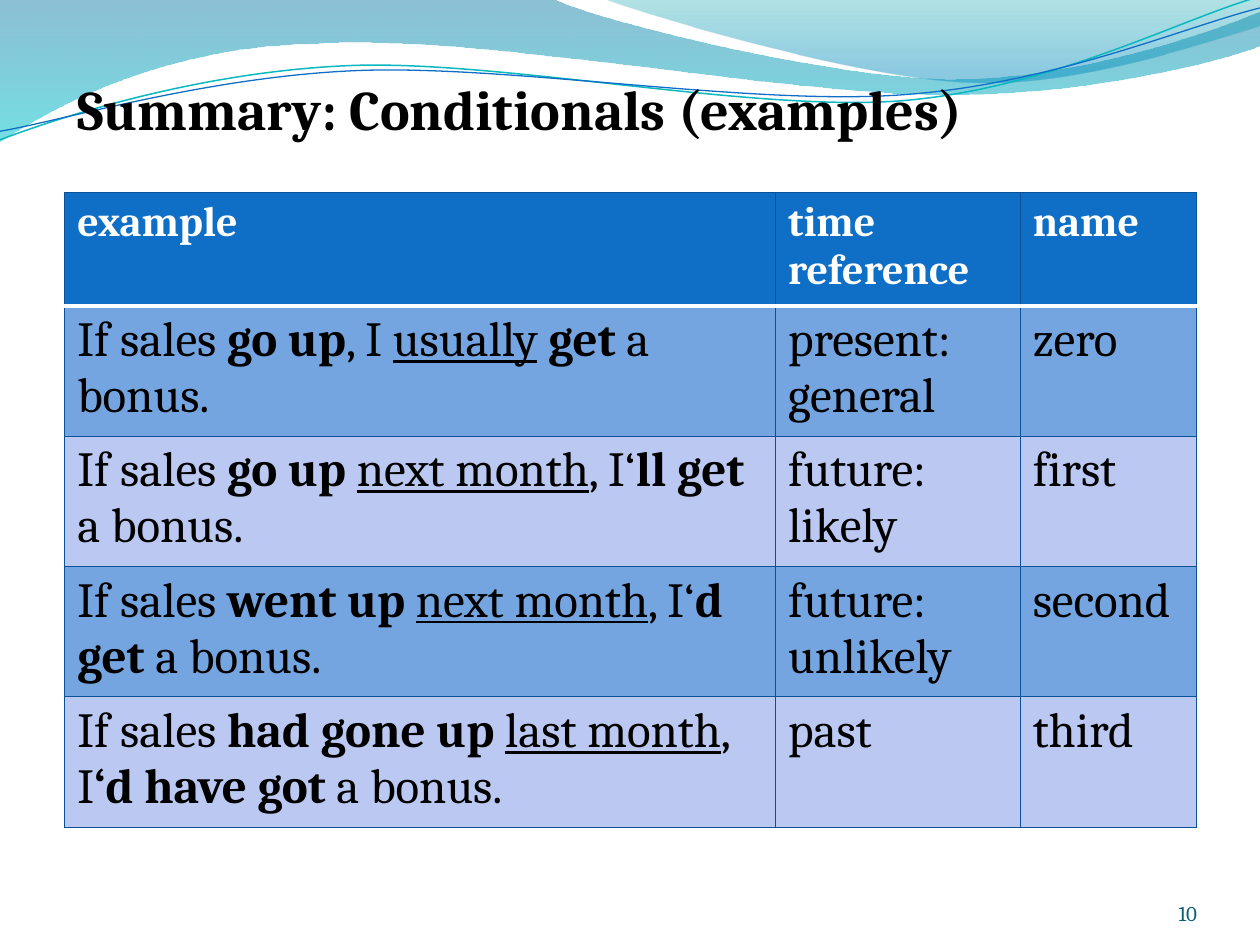
"""Build the summary slide on conditionals: waves, title, table and page number."""
from dataclasses import dataclass
from itertools import chain

from lxml.etree import Element as Node, SubElement as Sub
from pptx import Presentation as Deck
from pptx.dml.color import RGBColor as Rgb
from pptx.enum.text import MSO_ANCHOR as Anchor, PP_ALIGN as Align
from pptx.oxml.ns import qn
from pptx.util import Pt


@dataclass(frozen=True)
class Theme:
    font: str = "Cambria"
    black: str = "000000"
    white: str = "FFFFFF"
    head: str = "0F6FC6"
    bands: tuple = ("75A5E0", "BBC9F2")
    rule: str = "095295"
    page: str = "045D75"
    teal: str = "0AB8BF"
    deep: tuple = (("0074A1", 0, 45), ("00C6CF", 1, 55))
    pale: tuple = (("00A1A9", 0, 30), ("008BBF", 0.8, 45))
    big: int = 32
    body: int = 28
    label: int = 24
    small: int = 12


class Page:
    def __init__(self, deck, theme):
        self.theme = theme
        self.slide = deck.slides.add_slide(deck.slide_layouts[6])

    def style(self, run, size, color, bold=False, under=False):
        font = run.font
        font.name, font.size, font.bold = self.theme.font, Pt(size), bold
        font.underline = under
        font.color.rgb = Rgb.from_string(color)

    def shape(self, start, parts, close):
        """Draw a part of one point as a line and a part of three as a Bezier curve."""
        pen = self.slide.shapes.build_freeform(*map(Pt, start))
        dots = [(Pt(x), Pt(y)) for x, y in chain(*parts)]
        pen.add_line_segments(dots, close=close)
        shape = pen.convert_to_shape()
        shape.shadow.inherit = False
        lines = iter(list(shape.element.iter(qn("a:lnTo"))))
        for part in parts:
            steps = [next(lines) for _ in part]
            if len(part) == 3:
                bend = Node(qn("a:cubicBezTo"))
                steps[0].addprevious(bend)
                for step in steps:
                    bend.append(step[0])
                    step.getparent().remove(step)
        return shape

    def wave(self, stops, start, *parts):
        shape = self.shape(start, parts, True)
        shape.line.fill.background()
        shape.fill.gradient()
        shape.fill.gradient_angle = 270
        for stop, (color, spot, _) in zip(shape.fill.gradient_stops, stops):
            stop.color.rgb, stop.position = Rgb.from_string(color), spot
        tints = shape.element.spPr.iter(qn("a:srgbClr"))
        for tint, (_, _, alpha) in zip(tints, stops):
            Sub(tint, qn("a:alpha"), val=str(alpha * 1000))

    def curve(self, color, width, start, *parts):
        shape = self.shape(start, parts, False)
        shape.rotation = 357.3
        shape.fill.background()
        shape.line.width = Pt(width)
        shape.line.color.rgb = Rgb.from_string(color)

    def text(self, box, words, size, color, bold=False, right=False):
        frame = self.slide.shapes.add_textbox(*map(Pt, box)).text_frame
        frame.word_wrap = True
        frame.text = words
        para = frame.paragraphs[0]
        if right:
            para.alignment = Align.RIGHT
            frame.vertical_anchor = Anchor.BOTTOM
            frame.margin_left = frame.margin_right = 0
            frame.margin_top = frame.margin_bottom = 0
        self.style(para.runs[0], size, color, bold)

    def edge(self, cell, side, color, width):
        line = Sub(cell._tc.get_or_add_tcPr(), qn("a:ln" + side), w=str(Pt(width)))
        Sub(Sub(line, qn("a:solidFill")), qn("a:srgbClr"), val=color)

    def cell(self, cell, words, row):
        """Fill a cell; stars mark bold text and underscores mark underlined text."""
        look = self.theme
        for side in "LRTB":
            split = (row, side) in ((0, "B"), (1, "T"))
            self.edge(cell, side, *((look.white, 2) if split else (look.rule, 0.75)))
        cell.fill.solid()
        fill = look.bands[(row - 1) % 2] if row else look.head
        cell.fill.fore_color.rgb = Rgb.from_string(fill)
        size, color = (look.body, look.black) if row else (look.label, look.white)
        frame = cell.text_frame
        for n, line in enumerate(words.split("\n")):
            para = frame.add_paragraph() if n else frame.paragraphs[0]
            for i, part in enumerate(line.split("*")):
                for j, bit in enumerate(part.split("_")):
                    if bit:
                        run = para.add_run()
                        run.text = bit
                        self.style(run, size, color, not row or i % 2 == 1, j % 2 == 1)

    def table(self, spot, cols, tall, rows):
        box = (*spot, sum(cols), sum(tall))
        grid = self.slide.shapes.add_table(len(rows), len(cols), *map(Pt, box)).table
        for col, width in zip(grid.columns, cols):
            col.width = Pt(width)
        for r, (row, height, texts) in enumerate(zip(grid.rows, tall, rows)):
            row.height = Pt(height)
            for cell, words in zip(row.cells, texts):
                self.cell(cell, words, r)


ROWS = (
    ("example", "time reference", "name"),
    ("If sales *go up*, I _usually_ *get* a bonus.", "present: general", "zero"),
    ("If sales *go up *_next month_, I‘*ll get *a bonus.", "future:\nlikely", "first"),
    ("If sales *went up *_next month_, I‘*d get* a bonus.", "future: unlikely", "second"),
    ("If sales *had gone up *_last month_, I*‘d have got* a bonus.", "past", "third"),
)


def main():
    deck = Deck()
    deck.slide_width, deck.slide_height = Pt(720), Pt(540)
    look = Theme()
    page = Page(deck, look)
    page.wave(look.deep, (0, 0), [(317, -0.5)],
              [(343, 12), (478, 45), (546, 45)], [(614, 45), (690, 19), (720, 6.5)],
              [(720.5, 26)], [(708, 32), (626, 55), (537, 54)],
              [(447, 54), (275, 20), (185, 24.5)], [(93, 26), (33, 60), (-0.5, 81)])
    page.wave(look.pale, (345, -0.5), [(366, 8), (491, 45), (554, 47)],
              [(616, 50), (692, 23), (720, 15)], [(720, 0)])
    page.curve(look.teal, 0.85, (-1.5, 63), [(33.5, 51.5), (114, 29.5), (200, 30)],
               [(285, 30.5), (426, 67), (512.5, 65)],
               [(599, 62.5), (676.5, 25.5), (720, 15.5)])
    page.curve(look.head, 0.75, (-1, 58), [(33, 54), (118.5, 32.5), (204, 33)],
               [(290.5, 33.5), (429, 64), (515.5, 61.5)],
               [(601.5, 59.5), (678.5, 30), (721.5, 21.5)])
    page.text((624, 500.5, 60, 28.75), "10", look.small, look.page, right=True)
    page.text((37, 39.25, 605, 46), "Summary: Conditionals (examples)",
              look.big, look.black, bold=True)
    page.table((37, 110), (406.25, 139.75, 100.75), (64.8, *[74.4] * 4), ROWS)
    deck.save("out.pptx")


if __name__ == "__main__":
    main()
